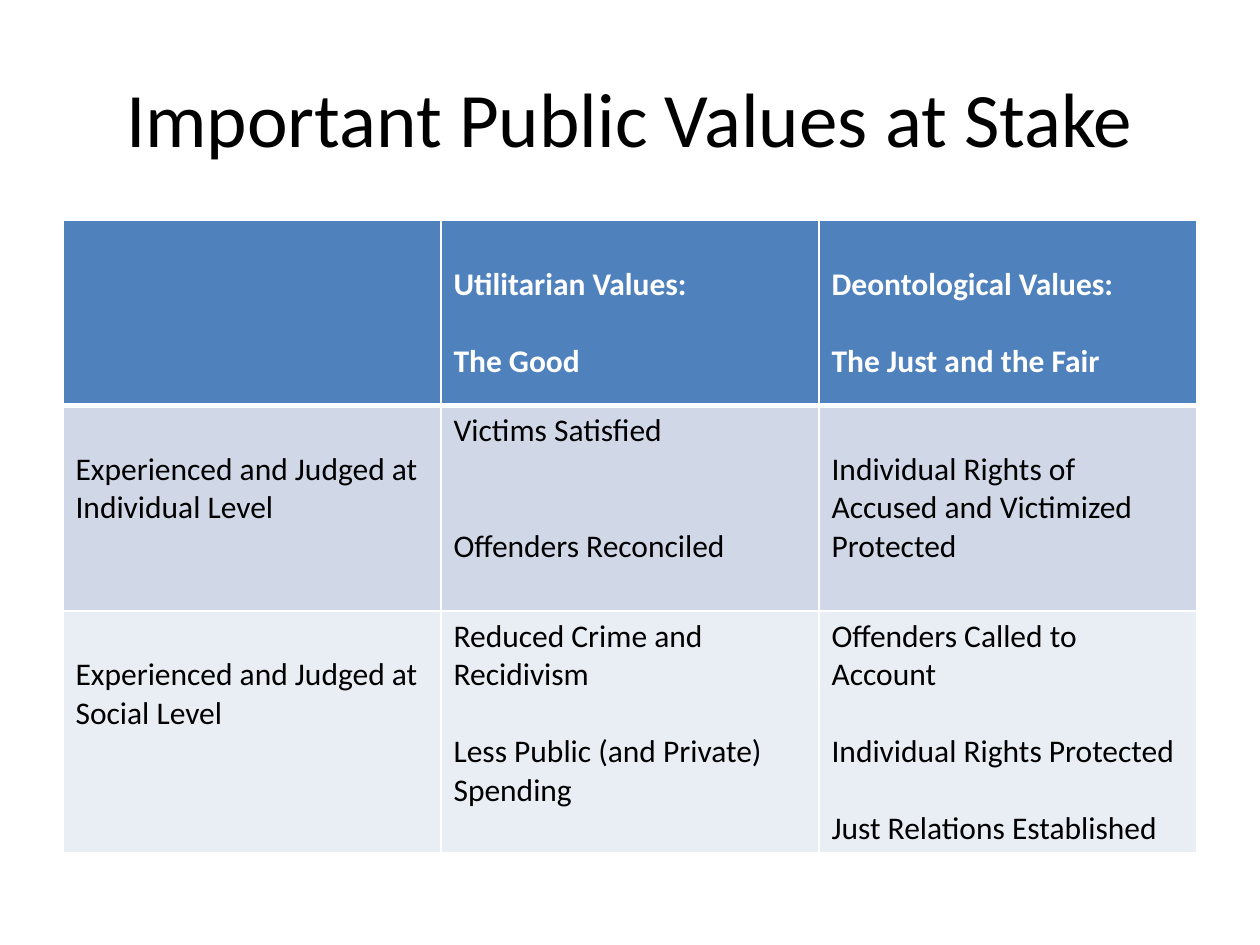
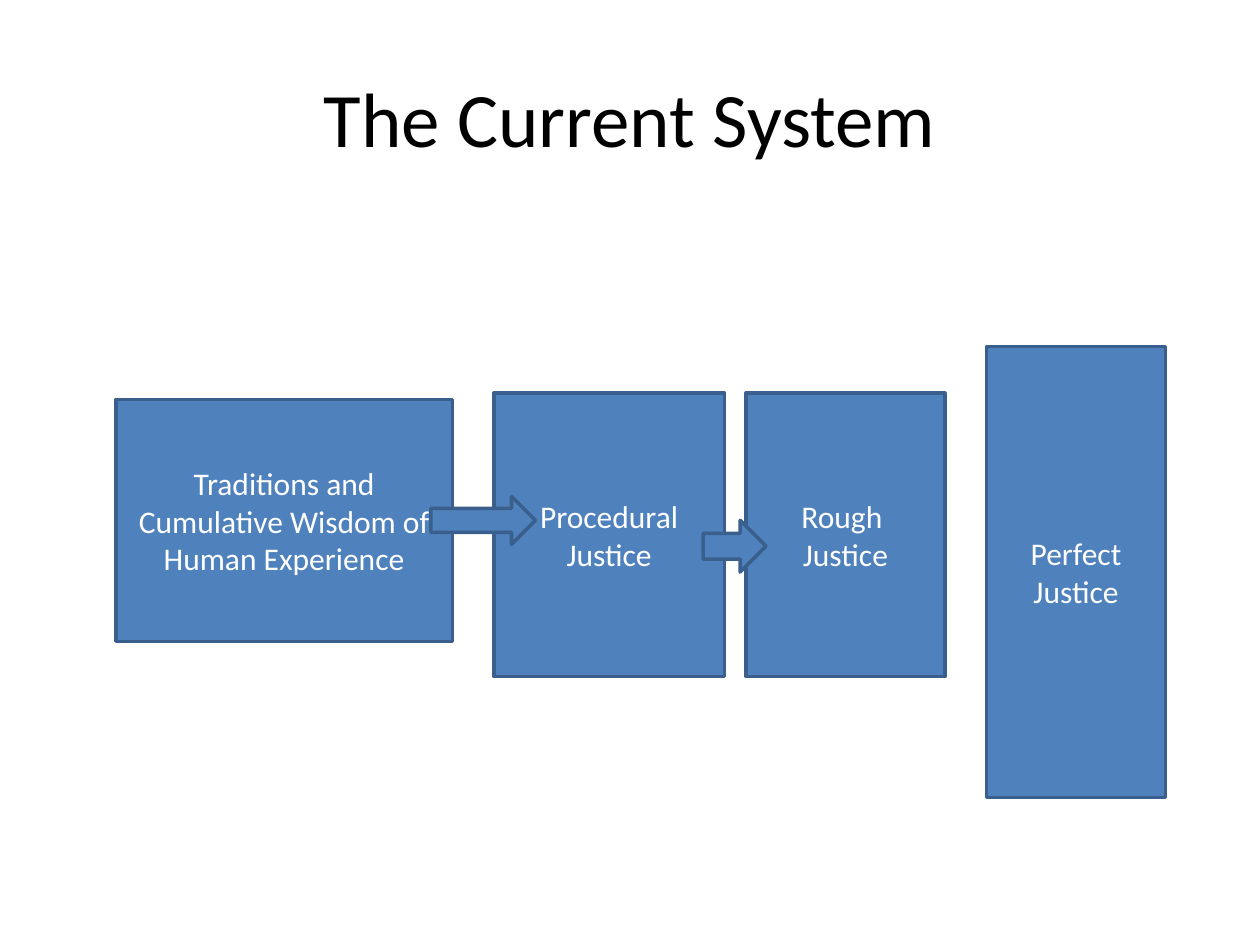
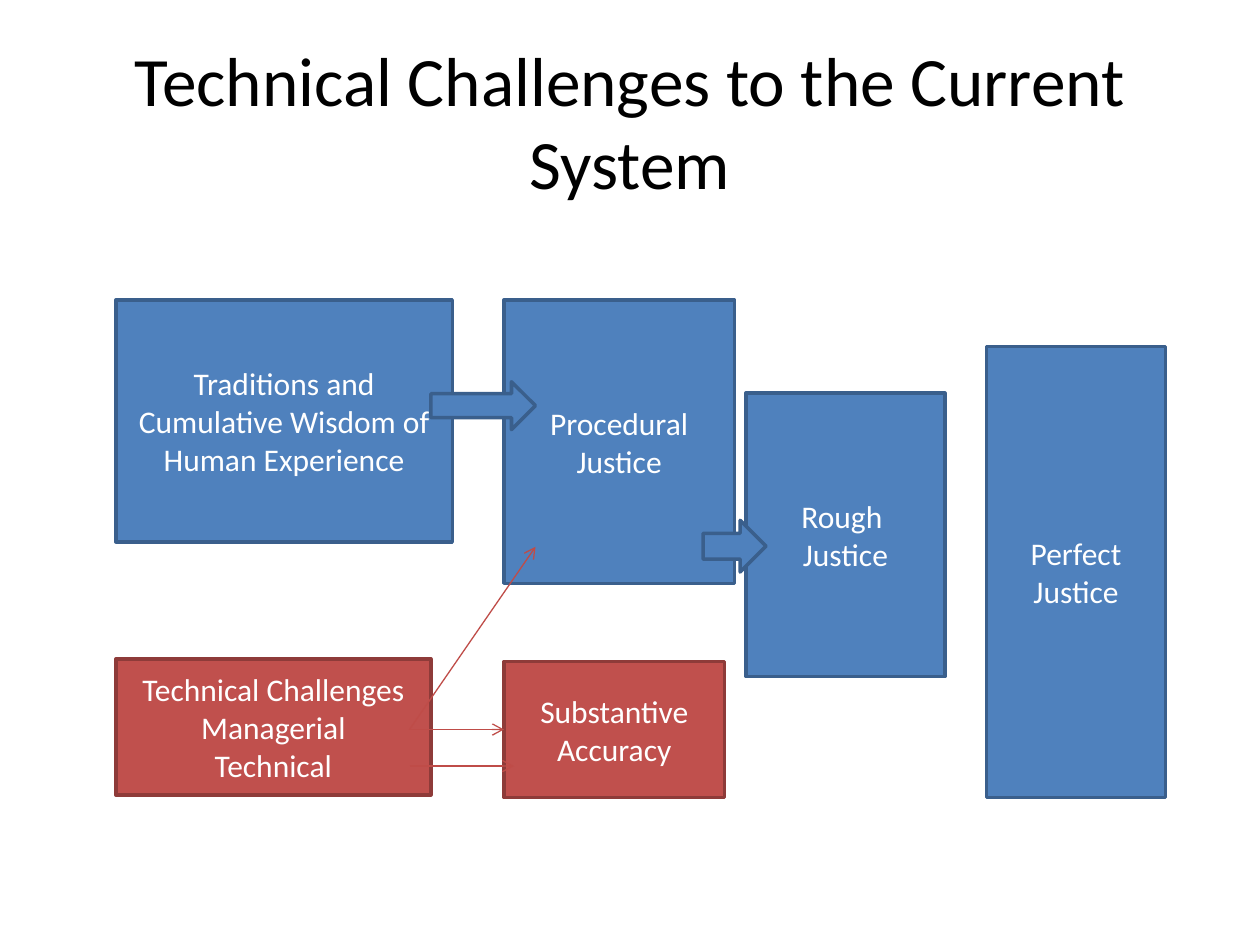
from typing import NamedTuple

from lxml.etree import SubElement
from pptx import Presentation
from pptx.dml.color import RGBColor
from pptx.enum.shapes import MSO_CONNECTOR, MSO_SHAPE
from pptx.enum.text import MSO_ANCHOR, PP_ALIGN
from pptx.oxml.ns import qn
from pptx.util import Inches, Pt

BLACK = RGBColor(0x00, 0x00, 0x00)
WHITE = RGBColor(0xFF, 0xFF, 0xFF)
BLUE = RGBColor(0x4F, 0x81, 0xBD)
BLUE_EDGE = RGBColor(0x3A, 0x5F, 0x8C)
RED = RGBColor(0xC0, 0x50, 0x4D)
RED_EDGE = RGBColor(0x8E, 0x3B, 0x39)
RED_ARROW = RGBColor(0xBF, 0x4C, 0x48)
BAND_DARK = RGBColor(0xD0, 0xD8, 0xE8)
BAND_LIGHT = RGBColor(0xE9, 0xED, 0xF4)

FONT = "Calibri"
BODY_SIZE = 18
LINE_HEIGHT = Pt(22)
CELL_MARGIN = Inches(0.05)


class Box(NamedTuple):
    """A rectangle in inches."""
    left: float
    top: float
    width: float
    height: float

    def inner(self, left, top, width, height):
        """Return a box placed relative to this one."""
        return Box(self.left + left, self.top + top, width, height)

    def lengths(self):
        """Return the four sides as slide lengths."""
        return [Inches(side) for side in self]


TITLE_BOX = Box(0.5, 0.3, 9, 1.25)
LONG_TITLE_BOX = Box(0.5, 0.33, 9, 1.25)
VALUES_BOX = Box(0.5, 1.75, 9, 5.02)
FLOW_BOX = Box(0.92, 2.38, 8.33, 3.95)
CHALLENGES_BOX = Box(0.92, 4.34, 4.83, 1.99)

VALUES_ROW_HEIGHTS = [1.47, 1.63, 1.92]
VALUES_ROW_FILLS = [BLUE, BAND_DARK, BAND_LIGHT]
VALUES = [
    [[],
     [(1, "Utilitarian Values:"), (1, "The Good")],
     [(1, "Deontological Values:"), (1, "The Just and the Fair")]],
    [[(1, "Experienced and Judged at Individual Level")],
     [(0, "Victims Satisfied"), (2, "Offenders Reconciled")],
     [(1, "Individual Rights of Accused and Victimized Protected")]],
    [[(1, "Experienced and Judged at Social Level")],
     [(0, "Reduced Crime and"), (0, "Recidivism"),
      (1, "Less Public (and Private) Spending")],
     [(0, "Offenders Called to Account"), (1, "Individual Rights Protected"),
      (1, "Just Relations Established")]],
]


def write_text(frame, lines, size=BODY_SIZE, color=WHITE, bold=False,
               align=PP_ALIGN.CENTER, anchor=MSO_ANCHOR.MIDDLE, gaps=()):
    """Fill a text frame with one paragraph per line, with gaps in lines before each."""
    frame.word_wrap = True
    frame.vertical_anchor = anchor
    for index, line in enumerate(lines):
        paragraph = frame.paragraphs[0] if index == 0 else frame.add_paragraph()
        paragraph.alignment = align
        if gaps:
            paragraph.space_before = Pt(LINE_HEIGHT.pt * gaps[index])
        run = paragraph.add_run()
        run.text = line
        run.font.name = FONT
        run.font.size = Pt(size)
        run.font.bold = bold
        run.font.color.rgb = color


def add_title(slide, title, box=TITLE_BOX, size=44):
    """Add the centred slide title."""
    heading = slide.shapes.add_textbox(*box.lengths())
    write_text(heading.text_frame, [title], size=size, color=BLACK)


def add_block(slide, box, lines=(), preset=MSO_SHAPE.RECTANGLE, fill=BLUE, edge=BLUE_EDGE):
    """Add a filled and outlined preset shape with centred text."""
    block = slide.shapes.add_shape(preset, *box.lengths())
    block.shadow.inherit = False
    block.fill.solid()
    block.fill.fore_color.rgb = fill
    block.line.color.rgb = edge
    block.line.width = Pt(2)
    write_text(block.text_frame, lines)


def add_thin_arrow(slide, box, start, end):
    """Add a thin red arrow between two points of a box."""
    ends = [Inches(side) for x, y in (start, end) for side in (box.left + x, box.top + y)]
    arrow = slide.shapes.add_connector(MSO_CONNECTOR.STRAIGHT, *ends)
    arrow.line.color.rgb = RED_ARROW
    arrow.line.width = Pt(0.75)
    properties = arrow.element.spPr
    SubElement(properties.find(qn("a:ln")), qn("a:tailEnd"), type="arrow")
    SubElement(properties, qn("a:effectLst"))


def set_borders(cell, **widths):
    """Give a cell white borders, with widths in points by side."""
    properties = cell._tc.get_or_add_tcPr()
    for side in "LRTB":
        border = SubElement(properties, qn(f"a:ln{side}"), w=str(int(Pt(widths.get(side, 1)))))
        fill = SubElement(border, qn("a:solidFill"))
        SubElement(fill, qn("a:srgbClr"), val=str(WHITE))


def add_values_table(slide, box):
    """Add the table of public values by kind and level."""
    table = slide.shapes.add_table(len(VALUES), len(VALUES[0]), *box.lengths()).table
    table.first_row = False
    table.horz_banding = False
    for row, height in zip(table.rows, VALUES_ROW_HEIGHTS):
        row.height = Inches(height)
    for row_index, (entries, fill) in enumerate(zip(VALUES, VALUES_ROW_FILLS)):
        is_header = row_index == 0
        for column_index, entry in enumerate(entries):
            cell = table.cell(row_index, column_index)
            set_borders(cell, B=3 if is_header else 1, T=3 if row_index == 1 else 1)
            cell.fill.solid()
            cell.fill.fore_color.rgb = fill
            if not entry:
                continue
            gaps, lines = zip(*entry)
            cell.margin_top = CELL_MARGIN + LINE_HEIGHT * gaps[0]
            write_text(cell.text_frame, lines, color=WHITE if is_header else BLACK,
                       bold=is_header, align=PP_ALIGN.LEFT, anchor=MSO_ANCHOR.TOP,
                       gaps=(0, *gaps[1:]))


def add_justice_flow(slide, box, traditions_top, procedural_left, procedural_top, arrow_top):
    """Add the flow from traditions to rough justice, beside perfect justice."""
    add_block(slide, box.inner(0, traditions_top, 2.67, 1.92),
              ["Traditions and Cumulative Wisdom of Human Experience"])
    add_block(slide, box.inner(procedural_left, procedural_top, 1.83, 2.25),
              ["Procedural Justice"])
    add_block(slide, box.inner(6.91, 0.37, 1.42, 3.58), ["Perfect", "Justice"])
    add_block(slide, box.inner(2.5, arrow_top, 0.83, 0.38), preset=MSO_SHAPE.RIGHT_ARROW)
    add_block(slide, box.inner(5, 0.74, 1.58, 2.25), ["Rough ", "Justice"])
    add_block(slide, box.inner(4.66, 1.75, 0.5, 0.41), preset=MSO_SHAPE.RIGHT_ARROW)


def add_challenges(slide, box):
    """Add the technical challenges and the arrows to what they affect."""
    add_block(slide, box.inner(0, 0.89, 2.5, 1.08),
              ["Technical Challenges", "Managerial", "Technical"], fill=RED, edge=RED_EDGE)
    add_block(slide, box.inner(3.08, 0.91, 1.75, 1.08),
              ["Substantive Accuracy"], fill=RED, edge=RED_EDGE)
    for start, end in [((2.33, 1.45), (3.33, 0)),
                       ((2.33, 1.45), (3.08, 1.45)),
                       ((2.33, 1.74), (3.16, 1.74))]:
        add_thin_arrow(slide, box, start, end)


def main():
    """Build and save the three slides."""
    deck = Presentation()
    deck.slide_width, deck.slide_height = Inches(10), Inches(7.5)
    blank = deck.slide_layouts[6]
    values, current, challenged = [deck.slides.add_slide(blank) for _ in range(3)]

    add_title(values, "Important Public Values at Stake")
    add_values_table(values, VALUES_BOX)

    add_title(current, "The Current System")
    add_justice_flow(current, FLOW_BOX, traditions_top=0.79, procedural_left=3,
                     procedural_top=0.74, arrow_top=1.56)

    add_title(challenged, "Technical Challenges to the Current System",
              box=LONG_TITLE_BOX, size=39.6)
    add_justice_flow(challenged, FLOW_BOX, traditions_top=0, procedural_left=3.08,
                     procedural_top=0, arrow_top=0.65)
    add_challenges(challenged, CHALLENGES_BOX)

    deck.save("out.pptx")


if __name__ == "__main__":
    main()
